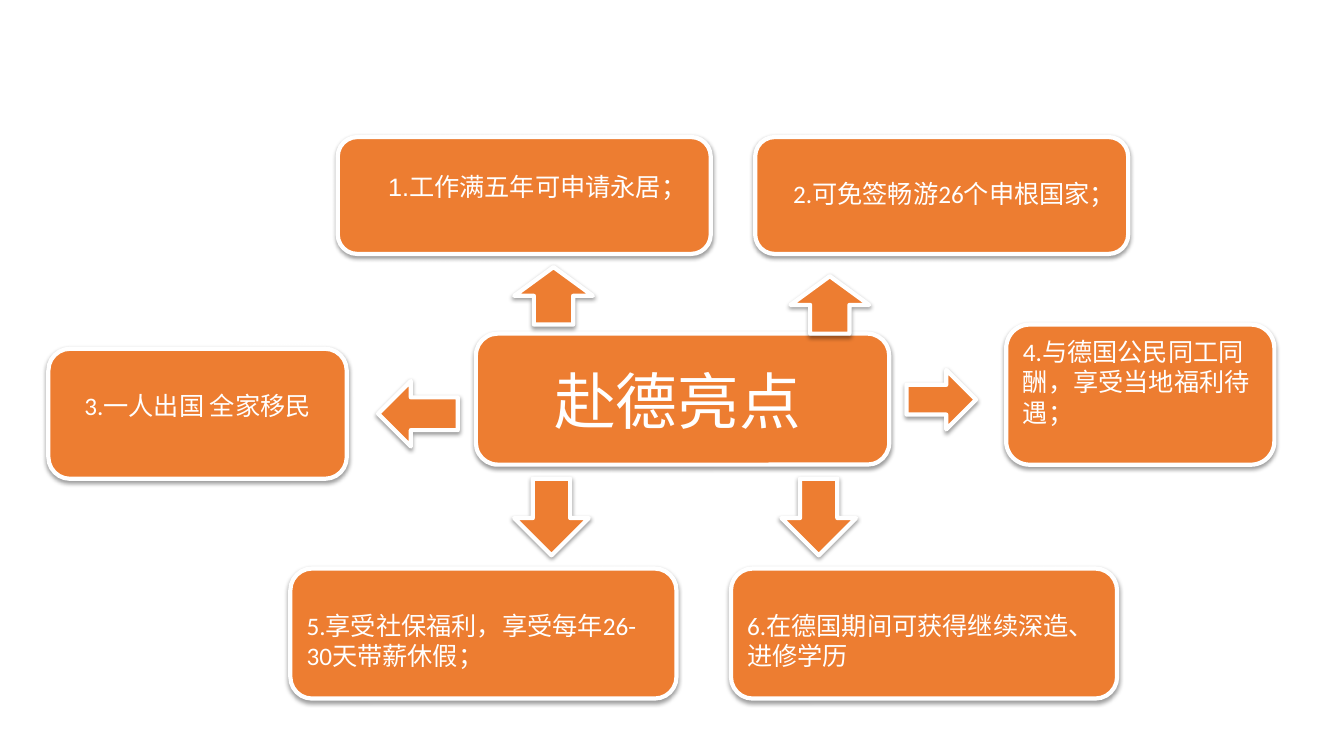
from dataclasses import dataclass

from lxml.etree import SubElement
from pptx import Presentation
from pptx.dml.color import RGBColor
from pptx.enum.shapes import MSO_SHAPE
from pptx.enum.text import MSO_ANCHOR, PP_ALIGN
from pptx.oxml.ns import qn
from pptx.shapes.autoshape import Shape
from pptx.slide import Slide
from pptx.util import Inches, Pt


@dataclass(frozen=True)
class Theme:
    orange: RGBColor = RGBColor(0xED, 0x7D, 0x31)
    white: RGBColor = RGBColor(0xFF, 0xFF, 0xFF)
    shadow: str = "000000"
    outline: float = 3
    title_size: int = 44
    body_size: int = 18
    title_font: str = "Arial"
    body_font: str = "Calibri"


@dataclass(frozen=True)
class Block:
    kind: MSO_SHAPE
    left: float
    top: float
    width: float
    height: float
    text: str = ""
    inset_left: float = 0.1
    inset_top: float = 0.05
    align: PP_ALIGN = PP_ALIGN.LEFT


THEME = Theme()
BOX = MSO_SHAPE.ROUNDED_RECTANGLE
UP, DOWN = MSO_SHAPE.UP_ARROW, MSO_SHAPE.DOWN_ARROW
LOWERED = 0.35  # top inset that starts the text one line lower

BLOCKS = [
    Block(BOX, 4.72, 3.31, 4.1, 1.3),
    Block(UP, 5.1, 2.65, 0.78, 0.57),
    Block(MSO_SHAPE.LEFT_ARROW, 3.75, 3.78, 0.79, 0.65),
    Block(DOWN, 5.1, 4.75, 0.74, 0.76),
    Block(DOWN, 7.75, 4.75, 0.74, 0.76),
    Block(MSO_SHAPE.RIGHT_ARROW, 8.99, 3.67, 0.69, 0.59),
    Block(BOX, 3.35, 1.36, 3.7, 1.16),
    Block(BOX, 0.48, 3.46, 2.96, 1.29, "3.一人出国 全家移民",
          inset_top=LOWERED, align=PP_ALIGN.CENTER),
    Block(BOX, 9.98, 3.22, 2.66, 1.39, "4.与德国公民同工同酬，享受当地福利待遇；"),
    Block(BOX, 7.25, 5.64, 3.83, 1.29, "6.在德国期间可获得继续深造、进修学历",
          inset_top=LOWERED),
    Block(BOX, 2.88, 5.64, 3.83, 1.29, "5.享受社保福利，享受每年26-30天带薪休假；",
          inset_top=LOWERED),
    Block(UP, 7.84, 2.74, 0.78, 0.57),
    Block(BOX, 7.49, 1.36, 3.7, 1.16, "2.可免签畅游26个申根国家；",
          inset_left=0.32, inset_top=LOWERED),
]


def write(sp: Shape, text: str, *, size: int = THEME.body_size,
          font: str = THEME.body_font, align: PP_ALIGN = PP_ALIGN.LEFT,
          inset_left: float = 0.1, inset_top: float = 0.05) -> None:
    tf = sp.text_frame
    tf.word_wrap = True
    tf.vertical_anchor = MSO_ANCHOR.TOP
    tf.margin_left, tf.margin_top = Inches(inset_left), Inches(inset_top)
    p = tf.paragraphs[0]
    p.alignment = align
    r = p.add_run()
    r.text = text
    r.font.size = Pt(size)
    r.font.name = font
    r.font.color.rgb = THEME.white


def add_shadow(sp: Shape) -> None:
    sp.shadow.inherit = False
    effects = sp.element.spPr.find(qn("a:effectLst"))
    outer = SubElement(effects, qn("a:outerShdw"), blurRad=str(Pt(3.1)),
                       dist=str(Pt(1.6)), dir="5400000", rotWithShape="0")
    color = SubElement(outer, qn("a:srgbClr"), val=THEME.shadow)
    SubElement(color, qn("a:alpha"), val="38000")


def add_block(s: Slide, b: Block) -> None:
    sp = s.shapes.add_shape(b.kind, Inches(b.left), Inches(b.top),
                            Inches(b.width), Inches(b.height))
    sp.fill.solid()
    sp.fill.fore_color.rgb = THEME.orange
    sp.line.color.rgb = THEME.white
    sp.line.width = Pt(THEME.outline)
    add_shadow(sp)
    if b.text:
        write(sp, b.text, align=b.align, inset_left=b.inset_left,
              inset_top=b.inset_top)


def add_label(s: Slide, left: float, top: float, width: float, height: float,
              text: str, size: int, align: PP_ALIGN) -> None:
    sp = s.shapes.add_textbox(Inches(left), Inches(top),
                              Inches(width), Inches(height))
    write(sp, text, size=size, font=THEME.title_font, align=align)


def main() -> None:
    prs = Presentation()
    prs.slide_width, prs.slide_height = Inches(13.33), Inches(7.5)
    s = prs.slides.add_slide(prs.slide_layouts[6])
    for block in BLOCKS:
        add_block(s, block)
    add_label(s, 5.03, 3.55, 3.38, 0.83, "赴德亮点",
              THEME.title_size, PP_ALIGN.CENTER)
    add_label(s, 3.75, 1.65, 3.08, 0.7, "1.工作满五年可申请永居；",
              THEME.body_size, PP_ALIGN.LEFT)
    prs.save("out.pptx")


if __name__ == "__main__":
    main()
